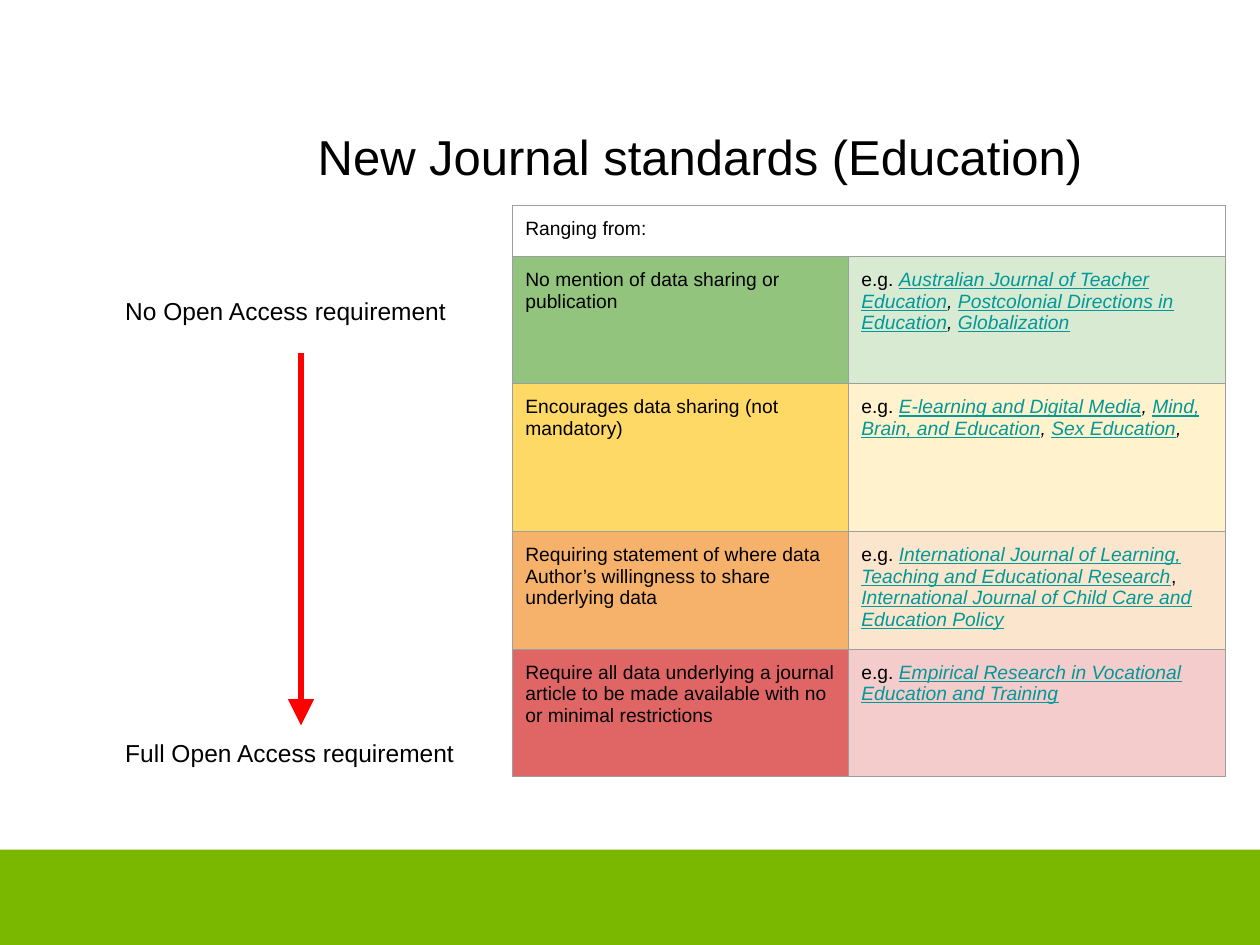
from lxml.etree import SubElement
from pptx import Presentation
from pptx.dml.color import RGBColor
from pptx.enum.shapes import MSO_CONNECTOR, MSO_SHAPE
from pptx.enum.text import MSO_ANCHOR
from pptx.oxml.ns import qn
from pptx.util import Pt

INSET = Pt(7.2)
PLAIN, ITALIC, LINK = "plain", "italic", "link"
COMMA = (", ", ITALIC)

LEVELS = [
    ("No mention of data sharing or publication", "93C47D", "D9EAD3", [
        ("Australian Journal of Teacher Education", LINK), COMMA,
        ("Postcolonial Directions in Education", LINK), COMMA,
        ("Globalization", LINK)]),
    ("Encourages data sharing (not mandatory)", "FFD966", "FFF2CC", [
        ("E-learning and Digital Media", LINK), COMMA,
        ("Mind, Brain, and Education", LINK), COMMA,
        ("Sex Education", LINK), (",", ITALIC)]),
    ("Requiring statement of where data Author’s willingness to share underlying data",
     "F6B26B", "FCE5CD", [
         ("International Journal of Learning, Teaching and Educational Research", LINK),
         (", ", PLAIN),
         ("International Journal of Child Care and Education Policy", LINK)]),
    ("Require all data underlying a journal article to be made available "
     "with no or minimal restrictions", "E06666", "F4CCCC", [
         ("Empirical Research in Vocational Education and Training", LINK)]),
]


def color(value):
    return RGBColor.from_string(value)


def style_span(span, size, style=PLAIN):
    span.font.name = "Arial"
    span.font.size = Pt(size)
    span.font.italic = style != PLAIN
    span.font.underline = style == LINK
    span.font.color.rgb = color("009999" if style == LINK else "000000")


def set_insets(target):
    target.margin_left = target.margin_right = INSET
    target.margin_top = target.margin_bottom = INSET


def add_text(page, left, top, width, height, text, size, anchor=MSO_ANCHOR.TOP):
    box = page.shapes.add_textbox(Pt(left), Pt(top), Pt(width), Pt(height))
    frame = box.text_frame
    frame.word_wrap = True
    frame.vertical_anchor = anchor
    set_insets(frame)
    frame.text = text
    style_span(frame.paragraphs[0].runs[0], size)


def add_footer_band(page):
    band = page.shapes.add_shape(MSO_SHAPE.RECTANGLE, 0, Pt(485.5), Pt(720), Pt(54.5))
    band.shadow.inherit = False
    band.fill.solid()
    band.fill.fore_color.rgb = color("7AB800")
    band.line.fill.background()


def add_arrow(page, x, top, bottom):
    arrow = page.shapes.add_connector(
        MSO_CONNECTOR.STRAIGHT, Pt(x), Pt(top), Pt(x), Pt(bottom))
    arrow.line.color.rgb = color("FF0000")
    arrow.line.width = Pt(3)
    SubElement(arrow.line._get_or_add_ln(), qn("a:tailEnd"),
               type="triangle", w="lg", len="lg")
    SubElement(arrow._element.spPr, qn("a:effectLst"))


def add_borders(cell):
    properties = cell._tc.get_or_add_tcPr()
    for side in ("lnL", "lnR", "lnT", "lnB"):
        line = SubElement(properties, qn(f"a:{side}"), w=str(Pt(0.75)))
        fill = SubElement(line, qn("a:solidFill"))
        SubElement(fill, qn("a:srgbClr"), val="9E9E9E")


def fill_cell(cell, spans, fill=None):
    set_insets(cell)
    add_borders(cell)
    if fill:
        cell.fill.solid()
        cell.fill.fore_color.rgb = color(fill)
    else:
        cell.fill.background()
    para = cell.text_frame.paragraphs[0]
    for text, style in spans:
        span = para.add_run()
        span.text = text
        style_span(span, 11, style)


def add_standards_table(page):
    widths, heights = (192, 215.5), (29.3, 72.6, 84.5, 60.5, 72.6)
    table = page.shapes.add_table(
        len(heights), len(widths), Pt(293), Pt(117.5),
        Pt(sum(widths)), Pt(sum(heights))).table
    table.first_row = table.horz_banding = False
    for column, width in zip(table.columns, widths):
        column.width = Pt(width)
    for row, height in zip(table.rows, heights):
        row.height = Pt(height)
    table.cell(0, 0).merge(table.cell(0, 1))
    fill_cell(table.cell(0, 0), [("Ranging from:", PLAIN)])
    fill_cell(table.cell(0, 1), [])
    for index, (standard, dark, light, journals) in enumerate(LEVELS, 1):
        fill_cell(table.cell(index, 0), [(standard, PLAIN)], dark)
        fill_cell(table.cell(index, 1), [("e.g. ", PLAIN)] + journals, light)


def main():
    deck = Presentation()
    deck.slide_width, deck.slide_height = Pt(720), Pt(540)
    page = deck.slides.add_slide(deck.slide_layouts[6])
    add_footer_band(page)
    add_text(page, 174.5, 29, 510, 120, "New Journal standards (Education)", 28,
             MSO_ANCHOR.MIDDLE)
    add_arrow(page, 172, 202, 414.5)
    add_text(page, 64.5, 162, 215.5, 40, "No Open Access requirement", 14)
    add_text(page, 64.5, 414.5, 215.5, 40, "Full Open Access requirement", 14)
    add_standards_table(page)
    deck.save("out.pptx")


if __name__ == "__main__":
    main()
